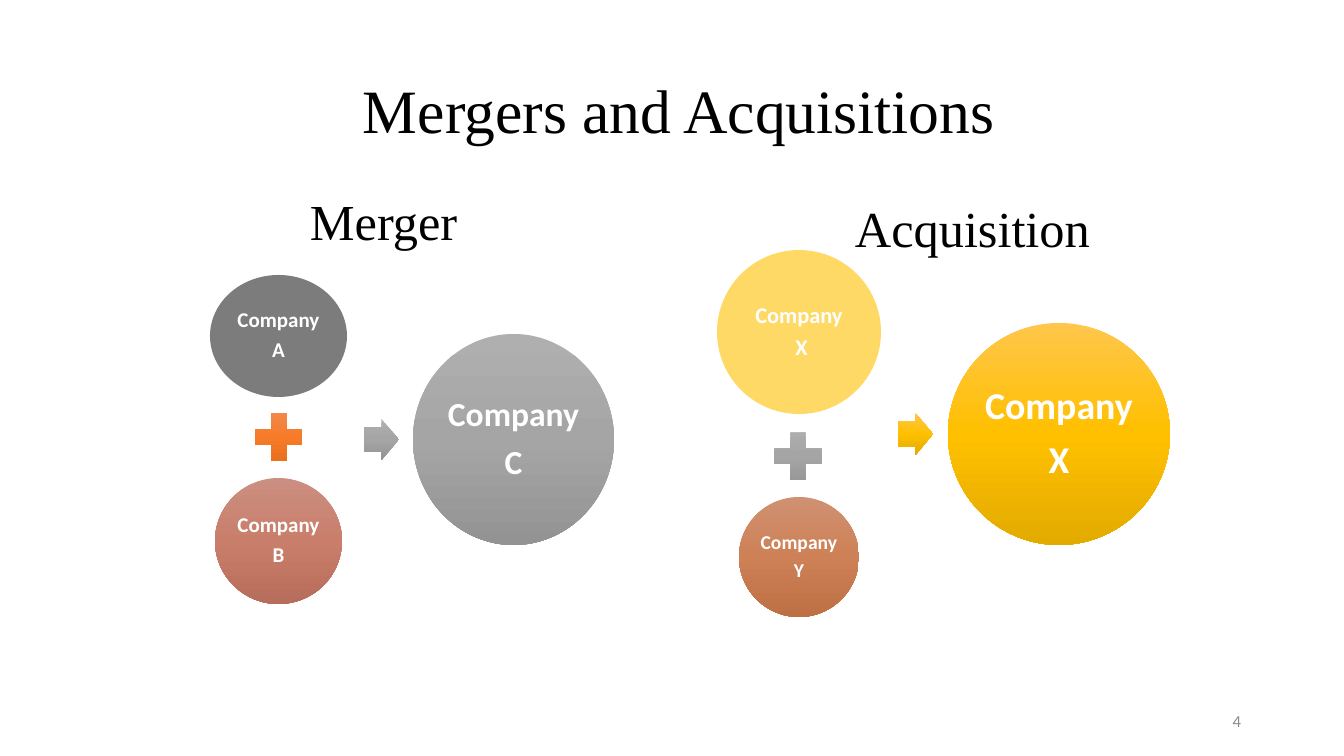
from copy import deepcopy

from pptx import Presentation
from pptx.dml.color import RGBColor
from pptx.enum.shapes import MSO_SHAPE as SHAPE
from pptx.enum.text import MSO_ANCHOR as ANCHOR, PP_ALIGN as ALIGN
from pptx.oxml.ns import qn
from pptx.util import Pt

PX = 914400 / 100.8
SERIF, SANS = "Times New Roman", "Calibri"
GREY = ["AFAFAF", "A5A5A5", "939393"]
GOLD = ["FFC64B", "FFC000", "E3AB00"]
ORANGE = ["F18C57", "F67B28", "E56C19"]
ROSE = ["CB8F81", "C97E6B", "B76D5B"]
COPPER = ["CF9172", "CE8156", "BD7043"]

TITLE = (" Mergers and Acquisitions", (92, 41, 1159, 146))
PAGE = ("4", (949, 701, 302, 40))
CAPTIONS = [("Merger", (300, 185, 291, 43)), ("Acquisition", (845, 192, 270, 50))]
DIAGRAMS = [
    [
        (SHAPE.OVAL, (210, 275, 137, 122), ["7C7C7C"], "Company\nA", 15),
        (SHAPE.MATH_PLUS, (247, 405, 64, 64), ORANGE, "", 0),
        (SHAPE.OVAL, (215, 478, 127, 126), ROSE, "Company\nB", 15),
        (SHAPE.RIGHT_ARROW, (364, 419, 35, 41), GREY, "", 0),
        (SHAPE.OVAL, (413, 334, 201, 211), GREY, "Company\nC", 24),
    ],
    [
        (SHAPE.OVAL, (717, 250, 164, 164), ["FFD966"], "Company\n X", 16),
        (SHAPE.MATH_PLUS, (766, 424, 64, 64), GREY, "", 0),
        (SHAPE.OVAL, (739, 497, 120, 120), COPPER, "Company\nY", 14),
        (SHAPE.RIGHT_ARROW, (898, 413, 35, 42), GOLD, "", 0),
        (SHAPE.OVAL, (948, 323, 222, 222), GOLD, "Company\nX", 27),
    ],
]


def emu(*lengths):
    return [round(n * PX) for n in lengths]


def rgb(code):
    return RGBColor.from_string(code)


def style(tf, font, size, color, align, bold=False):
    for p in tf.paragraphs:
        p.alignment = align
        for r in p.runs:
            r.font.name, r.font.size, r.font.bold = font, Pt(size), bold
            r.font.color.rgb = rgb(color)


def paint(sp, colors):
    if len(colors) == 1:
        sp.fill.solid()
        sp.fill.fore_color.rgb = rgb(colors[0])
        return
    sp.fill.gradient()
    sp.fill.gradient_angle = 270
    stops = next(sp._element.spPr.iter(qn("a:gsLst")))
    stops.append(deepcopy(stops[0]))
    for i, (stop, color) in enumerate(zip(sp.fill.gradient_stops, colors)):
        stop.position = i / 2
        stop.color.rgb = rgb(color)


def add_part(shapes, kind, box, colors, text, size):
    sp = shapes.add_shape(kind, *emu(*box))
    sp.shadow.inherit = False
    sp.line.fill.background()
    paint(sp, colors)
    if kind == SHAPE.RIGHT_ARROW:
        sp.adjustments[0] = 0.6
    if text:
        tf = sp.text_frame
        tf.text = text
        tf.word_wrap = True
        tf.vertical_anchor = ANCHOR.MIDDLE
        tf.margin_left = tf.margin_right = tf.margin_top = tf.margin_bottom = emu(2)[0]
        style(tf, SANS, size, "FFFFFF", ALIGN.CENTER, True)
        for p in tf.paragraphs:
            p.line_spacing = 0.9
            p.space_after = Pt(0.35 * size)


def add_text(s, text, box, font, size, color, align):
    tf = s.shapes.add_textbox(*emu(*box)).text_frame
    tf.text = text
    style(tf, font, size, color, align)
    return tf


def main():
    """Build the mergers and acquisitions slide."""
    prs = Presentation()
    prs.slide_width, prs.slide_height = emu(1344, 756)
    s = prs.slides.add_slide(prs.slide_layouts[5])

    text, box = TITLE
    title = s.shapes.title
    title.left, title.top, title.width, title.height = emu(*box)
    title.text_frame.text = text
    title.text_frame.vertical_anchor = ANCHOR.MIDDLE
    style(title.text_frame, SERIF, 44, "000000", ALIGN.CENTER)
    title.text_frame.paragraphs[0].line_spacing = 0.9

    for parts in DIAGRAMS:
        group = s.shapes.add_group_shape()
        for part in parts:
            add_part(group.shapes, *part)

    page = add_text(s, *PAGE, SANS, 12, "8C8C8C", ALIGN.RIGHT)
    page.word_wrap = True
    page.vertical_anchor = ANCHOR.MIDDLE
    for caption in CAPTIONS:
        add_text(s, *caption, SERIF, 36, "000000", ALIGN.LEFT).word_wrap = False

    prs.save("out.pptx")


if __name__ == "__main__":
    main()
